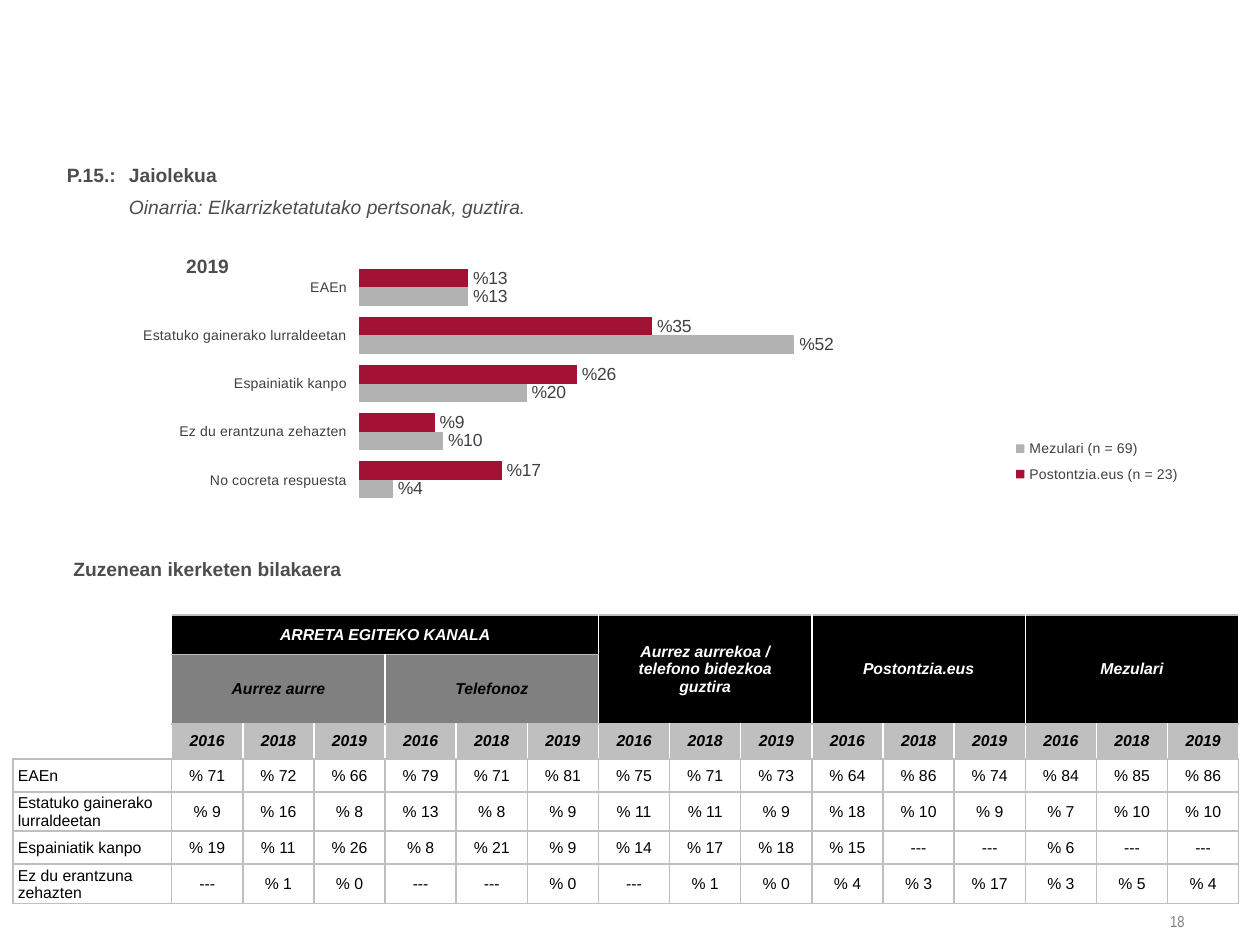
from dataclasses import dataclass
from typing import NamedTuple, Optional

from lxml.etree import SubElement
from pptx import Presentation
from pptx.chart.data import CategoryChartData
from pptx.dml.color import RGBColor
from pptx.enum.chart import XL_CHART_TYPE as ChartType, XL_LEGEND_POSITION as LegendPos
from pptx.enum.chart import XL_LABEL_POSITION as LabelPos, XL_TICK_MARK as Tick
from pptx.enum.text import MSO_ANCHOR as Anchor, MSO_AUTO_SIZE as AutoSize, PP_ALIGN as Align
from pptx.oxml.ns import qn
from pptx.util import Cm, Pt


@dataclass(frozen=True)
class Theme:
    font: str = "Arial"
    narrow: str = "Arial Narrow"
    text: str = "4D4D4D"
    chart_text: str = "404040"
    black: str = "000000"
    white: str = "FFFFFF"
    mid: str = "808080"
    light: str = "BFBFBF"
    red: str = "A31235"
    silver: str = "B2B2B2"
    heading: int = 11
    label: int = 10
    body: int = 9
    small: int = 8


class Run(NamedTuple):
    text: str
    bold: bool = False
    italic: bool = False


class Box(NamedTuple):
    x: float
    y: float
    w: float
    h: float


class Series(NamedTuple):
    name: str
    values: tuple
    color: str


class Header(NamedTuple):
    text: str
    row: int
    col: int
    rows: int
    cols: int
    fill: str
    color: str


T = Theme()
MAILBOX, MESSENGER = "Postontzia.eus", "Mezulari"
PLACES = ("EAEn", "Estatuko gainerako lurraldeetan", "Espainiatik kanpo",
          "Ez du erantzuna zehazten")
CATEGORIES = PLACES + ("No cocreta respuesta",)
SERIES = (
    Series(f"{MAILBOX} (n = 23)", (0.13, 0.35, 0.26, 0.09, 0.17), T.red),
    Series(f"{MESSENGER} (n = 69)", (0.13, 0.52, 0.2, 0.1, 0.04), T.silver),
)
YEARS = ("2016", "2018", "2019")
HEADERS = (
    Header("ARRETA EGITEKO KANALA", 0, 1, 1, 6, T.black, T.white),
    Header("Aurrez aurrekoa / telefono bidezkoa\nguztira", 0, 7, 2, 3, T.black, T.white),
    Header(MAILBOX, 0, 10, 2, 3, T.black, T.white),
    Header(MESSENGER, 0, 13, 2, 3, T.black, T.white),
    Header("Aurrez aurre", 1, 1, 1, 3, T.mid, T.black),
    Header("Telefonoz", 1, 4, 1, 3, T.mid, T.black),
) + tuple(Header(YEARS[i % 3], 2, i + 1, 1, 1, T.light, T.black) for i in range(15))
SHARES = (
    (71, 72, 66, 79, 71, 81, 75, 71, 73, 64, 86, 74, 84, 85, 86),
    (9, 16, 8, 13, 8, 9, 11, 11, 9, 18, 10, 9, 7, 10, 10),
    (19, 11, 26, 8, 21, 9, 14, 17, 18, 15, None, None, 6, None, None),
    (None, 1, 0, None, None, 0, None, 1, 0, 4, 3, 17, 3, 5, 4),
)
ROW_HEIGHTS = (0.79, 0.79, 0.71, 0.66, 0.66, 0.66, 0.71)


def style(font, size: int, color: str, name: str = T.font, bold=False, italic=False) -> None:
    """Apply face, size, colour and weight to a font."""
    font.name, font.size, font.bold, font.italic = name, Pt(size), bold, italic
    font.color.rgb = RGBColor.from_string(color)


def add_heading(slide, box: Box, runs: tuple, align: Optional[Align] = None) -> None:
    """Add a hanging-indent heading with one run per line."""
    sp = slide.shapes.add_textbox(*map(Cm, box))
    tf = sp.text_frame
    tf.word_wrap, tf.auto_size = True, AutoSize.SHAPE_TO_FIT_TEXT
    tf.margin_left, tf.margin_right = Cm(0.1), Cm(0.25)
    p = tf.paragraphs[0]
    p.alignment, p.line_spacing = align, Pt(18)
    pPr = p._p.get_or_add_pPr()
    pPr.set("marL", str(Cm(1.25)))
    pPr.set("indent", str(-Cm(1.25)))
    for i, run in enumerate(runs):
        if i:
            p.add_line_break()
        r = p.add_run()
        r.text = run.text
        style(r.font, T.heading, T.text, bold=run.bold, italic=run.italic)


def set_layout(parent, box: Box, inner: bool = False) -> None:
    """Place a chart part by fractions of the chart area."""
    for old in parent.findall(qn("c:layout")):
        parent.remove(old)
    layout = SubElement(parent, qn("c:layout"))
    parent.remove(layout)
    parent.insert(1 if parent.tag == qn("c:legend") else 0, layout)
    manual = SubElement(layout, qn("c:manualLayout"))
    if inner:
        SubElement(manual, qn("c:layoutTarget"), val="inner")
    for tag in ("xMode", "yMode"):
        SubElement(manual, qn(f"c:{tag}"), val="edge")
    for tag, value in zip("xywh", box):
        SubElement(manual, qn(f"c:{tag}"), val=str(value))


def add_birthplace_chart(slide) -> None:
    """Add the clustered bar chart of birthplaces."""
    data = CategoryChartData(number_format="0%")
    data.categories = CATEGORIES
    for series in SERIES:
        data.add_series(series.name, series.values)
    chart = slide.shapes.add_chart(ChartType.BAR_CLUSTERED, Cm(0.69), Cm(5.26),
                                   Cm(23.42), Cm(4.9), data).chart
    style(chart.font, T.label, T.chart_text)
    chart.has_title = False
    plot = chart.plots[0]
    plot.gap_width, plot.overlap, plot.vary_by_categories = 61, 0, False
    for item, series in zip(plot.series, SERIES):
        item.format.fill.solid()
        item.format.fill.fore_color.rgb = RGBColor.from_string(series.color)
        labels = item.data_labels
        labels.show_value, labels.position = True, LabelPos.OUTSIDE_END
        labels.number_format, labels.number_format_is_linked = "%0", False
        style(labels.font, T.label, T.chart_text)
    cat, val = chart.category_axis, chart.value_axis
    cat.reverse_order, cat.major_tick_mark = True, Tick.OUTSIDE
    cat.format.line.fill.background()
    style(cat.tick_labels.font, T.small, T.chart_text)
    val.minimum_scale, val.maximum_scale, val.major_unit = 0, 1, 0.5
    val.has_major_gridlines, val.visible = False, False
    chart.has_legend = True
    legend = chart.legend
    legend.position, legend.include_in_layout = LegendPos.RIGHT, False
    style(legend.font, T.small, T.chart_text)
    set_layout(legend._element, Box(0.83, 0.7, 0.17, 0.25))
    set_layout(chart._chartSpace.chart.plotArea, Box(0.28, 0.01, 0.72, 0.99), inner=True)


def set_borders(cell, **colors: Optional[str]) -> None:
    """Draw one-point borders keyed by side, or none where the colour is None."""
    tcPr = cell._tc.get_or_add_tcPr()
    for side in "LRTB":
        color = colors.get(side, T.light)
        ln = SubElement(tcPr, qn(f"a:ln{side}"), w=str(Pt(1)))
        fill = SubElement(ln, qn("a:solidFill" if color else "a:noFill"))
        if color:
            SubElement(fill, qn("a:srgbClr"), val=color)


def fill_cell(cell, text: str, fill: str, color: str, align: Align, heading: bool) -> None:
    """Fill a cell and write its text, one run per line."""
    cell.fill.solid()
    cell.fill.fore_color.rgb = RGBColor.from_string(fill)
    cell.vertical_anchor = Anchor.MIDDLE
    p = cell.text_frame.paragraphs[0]
    p.alignment = align
    for i, line in enumerate(text.split("\n")):
        if i:
            p.add_line_break()
        r = p.add_run()
        r.text = line
        style(r.font, T.body, color, bold=heading, italic=heading)


def add_trend_table(slide) -> None:
    """Add the table of shares by channel and year."""
    table = slide.shapes.add_table(7, 16, Cm(0.26), Cm(12.4), Cm(24.71), Cm(5.2)).table
    table.first_row = table.horz_banding = False
    for i, col in enumerate(table.columns):
        col.width = Cm(21.51) // 15 if i else Cm(3.2)
    for row, height in zip(table.rows, ROW_HEIGHTS):
        row.height = Cm(height)
    for r in range(3):
        for c in range(16):
            cell = table.cell(r, c)
            edges = {} if c else {"T": None, "B": T.light if r == 2 else None}
            set_borders(cell, L=T.white if c else None, R=T.white, **edges)
            cell.fill.background()
            SubElement(cell.text_frame.paragraphs[0]._p, qn("a:endParaRPr"), sz=str(T.body * 100))
    for h in HEADERS:
        cell = table.cell(h.row, h.col)
        if h.rows * h.cols > 1:
            cell.merge(table.cell(h.row + h.rows - 1, h.col + h.cols - 1))
        fill_cell(cell, h.text, h.fill, h.color, Align.CENTER, True)
    for r, (place, shares) in enumerate(zip(PLACES, SHARES), start=3):
        texts = [place] + ["---" if s is None else f"% {s}" for s in shares]
        for c, text in enumerate(texts):
            cell = table.cell(r, c)
            set_borders(cell)
            cell.margin_left = Cm(0.03 if c else 0.1)
            cell.margin_right = cell.margin_top = Cm(0.03)
            cell.margin_bottom = 0
            fill_cell(cell, text, T.white, T.black, Align.CENTER if c else Align.LEFT, False)


def add_page_number(slide, number: str) -> None:
    """Add the page number at the lower right."""
    tf = slide.shapes.add_textbox(Cm(22.1), Cm(18.21), Cm(2.03), Cm(0.71)).text_frame
    tf.word_wrap, tf.vertical_anchor = True, Anchor.MIDDLE
    p = tf.paragraphs[0]
    p.alignment = Align.RIGHT
    r = p.add_run()
    r.text = number
    style(r.font, T.body, T.mid, T.narrow)


def main() -> None:
    """Build the birthplace slide."""
    prs = Presentation()
    prs.slide_width, prs.slide_height = Cm(25.4), Cm(19.05)
    s = prs.slides.add_slide(prs.slide_layouts[6])
    add_page_number(s, "18")
    add_heading(s, Box(1.25, 3, 22.89, 1.55), (
        Run("P.15.:\tJaiolekua", bold=True),
        Run("Oinarria: Elkarrizketatutako pertsonak, guztira.", italic=True)))
    add_birthplace_chart(s)
    add_heading(s, Box(1.25, 4.83, 6.02, 0.84), (Run("2019", bold=True),), Align.CENTER)
    add_trend_table(s)
    add_heading(s, Box(1.25, 10.95, 6.02, 0.89),
                (Run("Zuzenean ikerketen bilakaera", bold=True),), Align.CENTER)
    prs.save("out.pptx")


if __name__ == "__main__":
    main()
